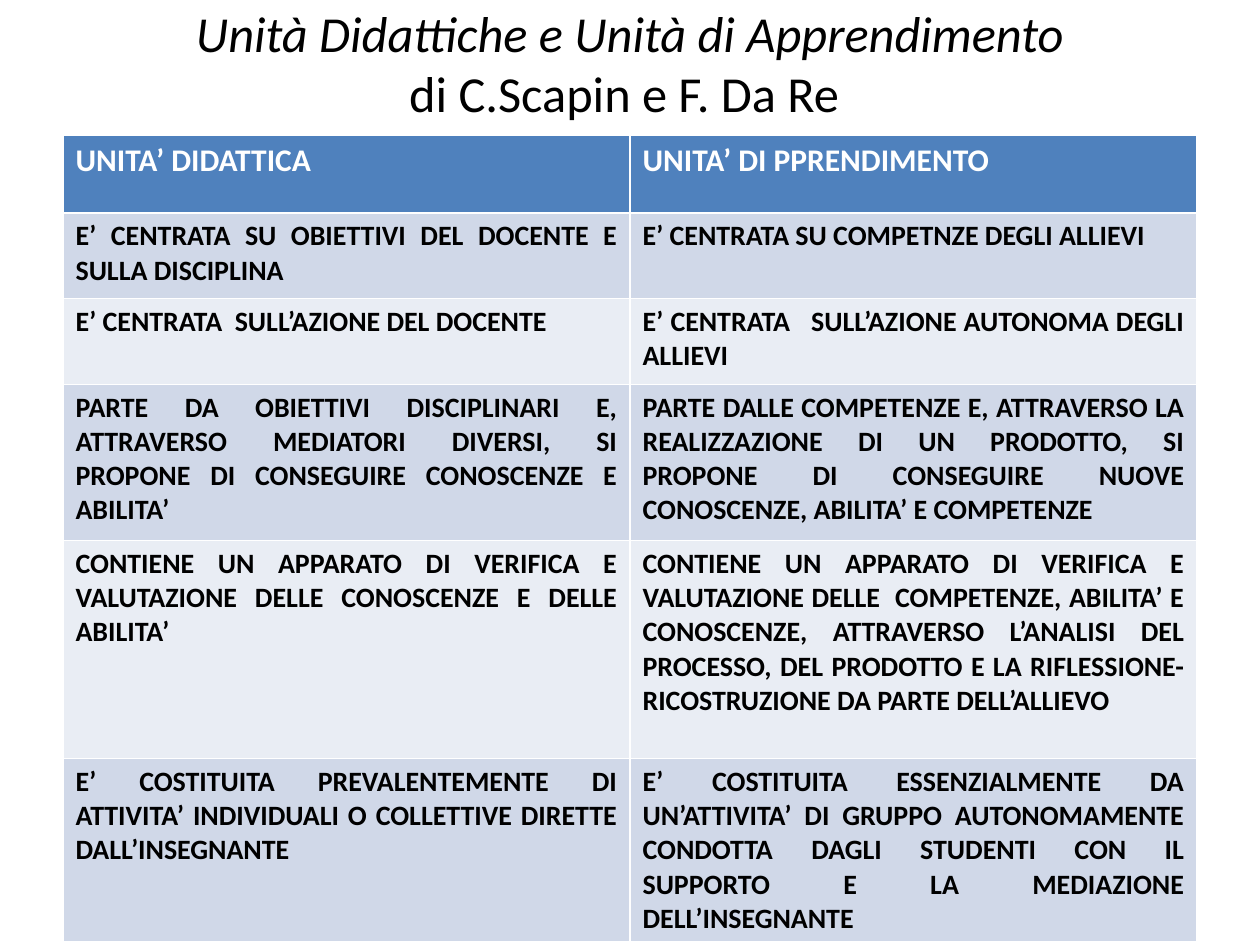
import lxml.etree
import pptx
import pptx.dml.color
import pptx.enum.text
import pptx.oxml.ns
import pptx.util

Inches = pptx.util.Inches
Pt = pptx.util.Pt
ALIGN = pptx.enum.text.PP_ALIGN

COLOURS = {
    "text": "000000",
    "header_text": "FFFFFF",
    "header": "4F81BD",
    "odd_row": "D0D8E8",
    "even_row": "E9EDF4",
}
TITLE_SIZE = 28.8
ROW_HEIGHTS = [0.62, 0.68, 0.68, 1.24, 1.73, 1.45]
COMPARISON = [
    ("UNITA’ DIDATTICA", "UNITA’ DI PPRENDIMENTO"),
    ("E’ CENTRATA SU OBIETTIVI DEL DOCENTE E SULLA DISCIPLINA",
     "E’ CENTRATA SU COMPETNZE DEGLI ALLIEVI"),
    ("E’ CENTRATA  SULL’AZIONE DEL DOCENTE",
     "E’ CENTRATA   SULL’AZIONE AUTONOMA DEGLI ALLIEVI"),
    ("PARTE DA OBIETTIVI DISCIPLINARI E, ATTRAVERSO MEDIATORI DIVERSI, "
     "SI PROPONE DI CONSEGUIRE CONOSCENZE E ABILITA’",
     "PARTE DALLE COMPETENZE E, ATTRAVERSO LA REALIZZAZIONE DI UN PRODOTTO, "
     "SI PROPONE DI CONSEGUIRE NUOVE CONOSCENZE, ABILITA’ E COMPETENZE"),
    ("CONTIENE UN APPARATO DI VERIFICA E VALUTAZIONE DELLE CONOSCENZE E DELLE ABILITA’",
     "CONTIENE UN APPARATO DI VERIFICA E VALUTAZIONE DELLE  COMPETENZE, ABILITA’ E "
     "CONOSCENZE, ATTRAVERSO L’ANALISI DEL PROCESSO, DEL PRODOTTO E LA "
     "RIFLESSIONE-RICOSTRUZIONE DA PARTE DELL’ALLIEVO"),
    ("E’ COSTITUITA PREVALENTEMENTE DI ATTIVITA’ INDIVIDUALI O COLLETTIVE "
     "DIRETTE DALL’INSEGNANTE",
     "E’ COSTITUITA ESSENZIALMENTE DA UN’ATTIVITA’ DI GRUPPO AUTONOMAMENTE "
     "CONDOTTA DAGLI STUDENTI CON IL SUPPORTO E LA MEDIAZIONE DELL’INSEGNANTE"),
]


def set_values(target, values):
    """Set each named attribute of the target."""
    for name, value in values.items():
        setattr(target, name, value)


def add_span(para, text, colour, **values):
    """Add a formatted run to a paragraph."""
    span = para.add_run()
    span.text = text
    set_values(span.font, {"name": "Calibri", **values})
    span.font.color.rgb = pptx.dml.color.RGBColor.from_string(COLOURS[colour])


def add_break(para, size):
    """Add a line break with the given text size."""
    para.add_line_break()
    line_break = para._p.findall(pptx.oxml.ns.qn("a:br"))[-1]
    lxml.etree.SubElement(line_break, pptx.oxml.ns.qn("a:rPr"), sz=str(round(size * 100)))


def format_title(box):
    """Place the title and write its two lines."""
    set_values(box, {"left": Inches(0.5), "top": Inches(0),
                     "width": Inches(9), "height": Inches(0.99)})
    set_values(box.text_frame, {
        "word_wrap": True,
        "auto_size": pptx.enum.text.MSO_AUTO_SIZE.NONE,
        "vertical_anchor": pptx.enum.text.MSO_ANCHOR.MIDDLE,
    })
    para = box.text_frame.paragraphs[0]
    para.alignment = ALIGN.CENTER
    size = Pt(TITLE_SIZE)
    add_span(para, "Unità Didattiche e Unità di Apprendimento", "text", size=size, italic=True)
    add_break(para, TITLE_SIZE)
    add_span(para, "di C.Scapin e F. Da Re ", "text", size=size, italic=False)


def fill_cell(cell, text, is_header, fill):
    """Write and colour one table cell."""
    cell.fill.solid()
    cell.fill.fore_color.rgb = pptx.dml.color.RGBColor.from_string(COLOURS[fill])
    para = cell.text_frame.paragraphs[0]
    para.alignment = ALIGN.LEFT if is_header else ALIGN.JUSTIFY
    add_span(para, text, "header_text" if is_header else "text",
             size=Pt(18 if is_header else 16), bold=True)


def add_comparison(page):
    """Add the two-column comparison table."""
    table = page.shapes.add_table(
        len(COMPARISON), 2, Inches(0.5), Inches(1.07),
        Inches(9), Inches(sum(ROW_HEIGHTS))).table
    for index, (height, texts) in enumerate(zip(ROW_HEIGHTS, COMPARISON)):
        table.rows[index].height = Inches(height)
        is_header = index == 0
        fill = "header" if is_header else "odd_row" if index % 2 else "even_row"
        for cell, text in zip(table.rows[index].cells, texts):
            fill_cell(cell, text, is_header, fill)


def main():
    """Build and save the slide."""
    deck = pptx.Presentation()
    set_values(deck, {"slide_width": Inches(10), "slide_height": Inches(7.5)})
    page = deck.slides.add_slide(deck.slide_layouts[5])
    format_title(page.shapes.title)
    add_comparison(page)
    deck.save("out.pptx")


if __name__ == "__main__":
    main()
